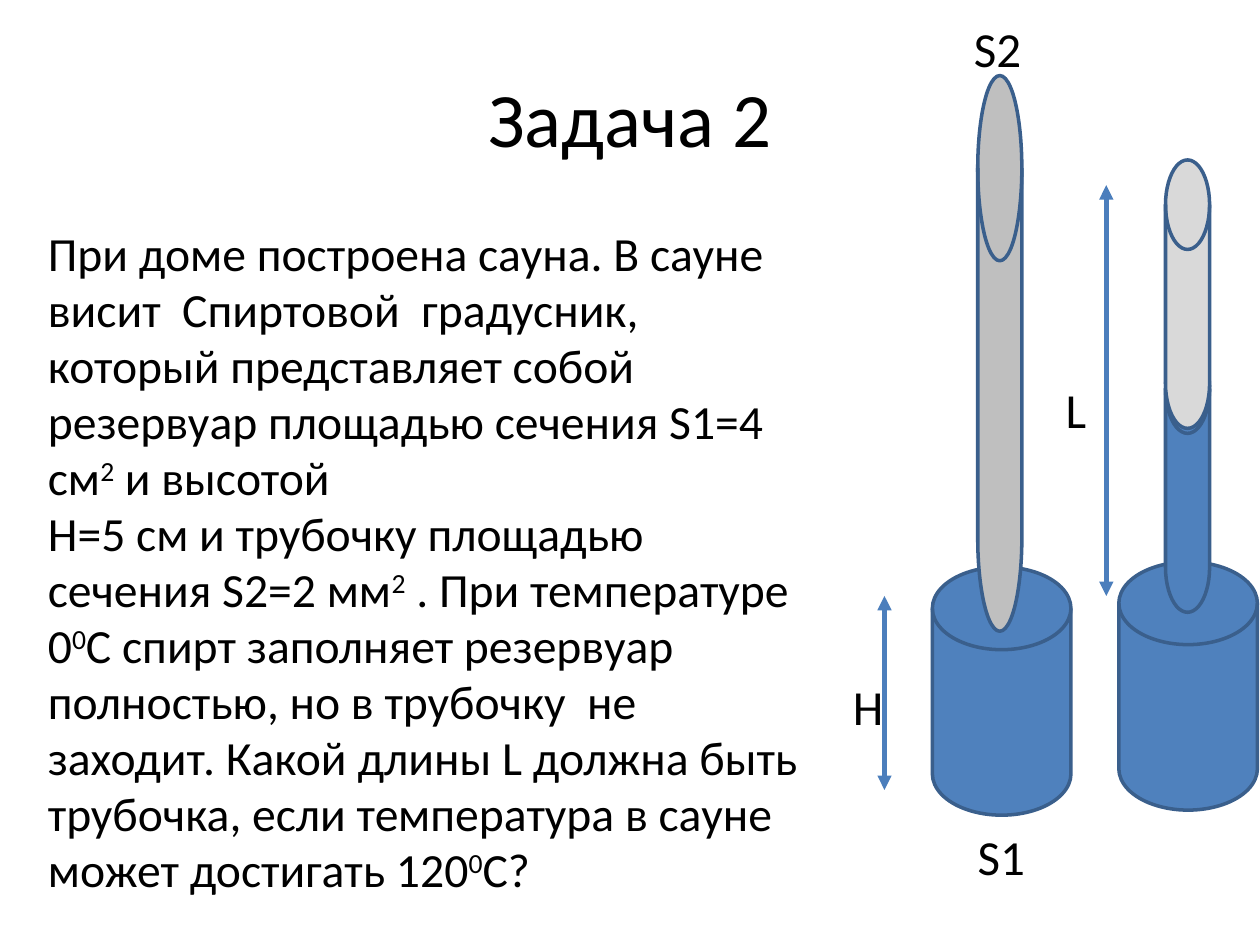
import pptx
import pptx.dml.color
import pptx.enum.shapes
import pptx.enum.text
import pptx.oxml
import pptx.oxml.ns
import pptx.util

EMU_PER_PX = 9144  # 100 px to the inch
FONT = "Calibri"
BLUE, OUTLINE, ARROW = "4F81BD", "3A5F8C", "4B7EBC"


def px(length):
    return pptx.util.Emu(length * EMU_PER_PX)


def color(hex_string):
    return pptx.dml.color.RGBColor.from_string(hex_string)


def set_values(target, values):
    for name, value in values.items():
        setattr(target, name, value)


class SlideBuilder:
    def __init__(self, slide):
        self.slide = slide

    def style_run(self, run, size):
        set_values(run.font, {"name": FONT, "size": pptx.util.Pt(size)})
        run.font.color.rgb = color("000000")

    def place(self, shape, box):
        names = ("left", "top", "width", "height")
        set_values(shape, dict(zip(names, map(px, box))))

    def title(self, text, box, size):
        shape = self.slide.shapes.title
        self.place(shape, box)
        shape.text_frame.vertical_anchor = pptx.enum.text.MSO_ANCHOR.MIDDLE
        paragraph = shape.text_frame.paragraphs[0]
        paragraph.alignment = pptx.enum.text.PP_ALIGN.CENTER
        run = paragraph.add_run()
        run.text = text
        self.style_run(run, size)

    def body(self, lines, box, size):
        """Each line alternates normal and superscript pieces."""
        shape = self.slide.placeholders[1]
        self.place(shape, box)
        frame = shape.text_frame
        set_values(frame, {"word_wrap": True,
                           "auto_size": pptx.enum.text.MSO_AUTO_SIZE.NONE})
        paragraph = frame.paragraphs[0]
        paragraph.line_spacing = 0.98
        properties = paragraph._p.get_or_add_pPr()
        properties.set("marL", "0")
        properties.set("indent", "0")
        properties.append(pptx.oxml.parse_xml(
            f"<a:buNone {pptx.oxml.ns.nsdecls('a')}/>"))
        for number, pieces in enumerate(lines):
            if number:
                paragraph.add_line_break()
            for index, piece in enumerate(pieces):
                run = paragraph.add_run()
                run.text = piece
                self.style_run(run, size)
                if index % 2:
                    run._r.get_or_add_rPr().set("baseline", "30000")

    def cylinder(self, box, fill):
        shape = self.slide.shapes.add_shape(
            pptx.enum.shapes.MSO_SHAPE.FLOWCHART_MAGNETIC_DISK, *map(px, box))
        shape.shadow.inherit = False
        shape.fill.solid()
        shape.fill.fore_color.rgb = color(fill)
        shape.line.color.rgb = color(OUTLINE)
        shape.line.width = pptx.util.Pt(2)

    def dimension(self, x, top, bottom):
        connector = self.slide.shapes.add_connector(
            pptx.enum.shapes.MSO_CONNECTOR.STRAIGHT,
            px(x), px(top), px(x), px(bottom))
        connector.line.color.rgb = color(ARROW)
        connector.line.width = pptx.util.Pt(2.75)
        namespace = pptx.oxml.ns.nsdecls("a")
        line = connector.line._get_or_add_ln()
        for end in ("headEnd", "tailEnd"):
            line.append(pptx.oxml.parse_xml(
                f'<a:{end} {namespace} type="triangle"/>'))
        connector._element.spPr.append(
            pptx.oxml.parse_xml(f"<a:effectLst {namespace}/>"))

    def label(self, text, box):
        shape = self.slide.shapes.add_textbox(*map(px, box))
        set_values(shape.text_frame, {
            "word_wrap": False,
            "auto_size": pptx.enum.text.MSO_AUTO_SIZE.SHAPE_TO_FIT_TEXT})
        run = shape.text_frame.paragraphs[0].add_run()
        run.text = text
        self.style_run(run, 28)


def main():
    presentation = pptx.Presentation()
    set_values(presentation, {"slide_width": px(1000), "slide_height": px(750)})
    builder = SlideBuilder(
        presentation.slides.add_slide(presentation.slide_layouts[1]))

    # Problem statement
    builder.title("Задача 2", (50, 30, 900, 125), 44)
    builder.body([
        ["При доме построена сауна. В сауне висит  Спиртовой  градусник, "
         "который представляет собой резервуар площадью сечения S1=4 cм",
         "2", " и высотой "],
        ["H=5 см и трубочку площадью сечения S2=2 мм", "2",
         " . При температуре 0", "0",
         "С спирт заполняет резервуар полностью, но в трубочку  не заходит. "
         "Какой длины L должна быть трубочка, если температура в сауне "
         "может достигать 120", "0", "С?"],
    ], (28, 175, 624, 495), 27.2)

    # Thermometers: reservoirs, alcohol and tubes, back to front
    for box, fill in [
        ((888, 446, 110, 197), BLUE),
        ((925, 273, 35, 213), BLUE),
        ((740, 450, 110, 197), BLUE),
        ((776, 60, 35, 441), "BFBFBF"),
        ((925, 127, 35, 213), "D9D9D9"),
    ]:
        builder.cylinder(box, fill)

    # Height and length arrows
    builder.dimension(702, 473, 627)
    builder.dimension(878, 147, 473)

    # Labels
    for text, box in [
        ("H", (667, 532, 45, 57)),
        ("L", (836, 296, 37, 57)),
        ("S1", (766, 651, 58, 57)),
        ("S2", (763, 10, 58, 57)),
    ]:
        builder.label(text, box)

    presentation.save("out.pptx")


if __name__ == "__main__":
    main()
